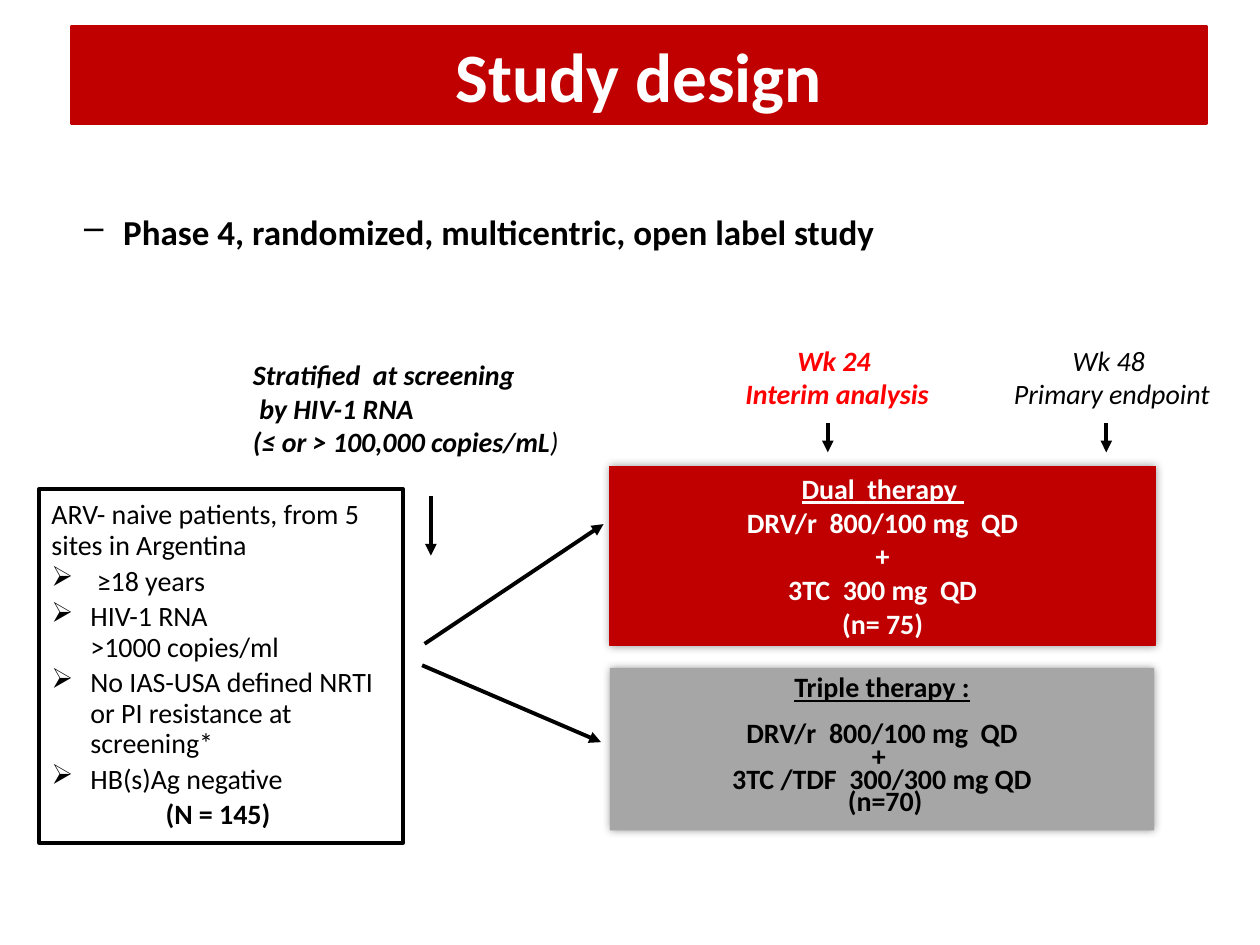
from dataclasses import dataclass
from typing import Optional

from lxml.etree import SubElement
from pptx import Presentation
from pptx.dml.color import RGBColor
from pptx.enum.shapes import MSO_CONNECTOR as Connector, MSO_SHAPE as Preset
from pptx.enum.text import MSO_ANCHOR as Anchor, PP_ALIGN as Align
from pptx.oxml.ns import qn
from pptx.util import Inches, Pt


@dataclass(frozen=True)
class Theme:
    font: str = "Calibri"
    red: str = "C00000"
    alert: str = "FF0000"
    gray: str = "A6A6A6"
    black: str = "000000"
    white: str = "FFFFFF"
    title_size: float = 39.6
    lead_size: float = 20
    text_size: float = 16
    arrow_width: float = 2.25


THEME = Theme()


@dataclass(frozen=True)
class Line:
    text: str
    color: str = THEME.black
    size: float = THEME.text_size
    bold: bool = False
    italic: bool = False
    underline: bool = False
    align: Align = Align.LEFT
    bullet: str = ""
    spacing: Optional[float] = None
    before: float = 0
    after: float = 0
    plain_end: str = ""


@dataclass(frozen=True)
class Box:
    left: float
    top: float
    width: float
    height: float
    lines: tuple[Line, ...]
    fill: Optional[str] = None
    outline: Optional[str] = None
    outline_width: float = 0.75
    glow: bool = False
    wrap: bool = True
    anchor: Anchor = Anchor.MIDDLE


@dataclass(frozen=True)
class Arrow:
    x1: float
    y1: float
    x2: float
    y2: float


def write_line(paragraph, line: Line) -> None:
    paragraph.text = line.text
    paragraph.alignment = line.align
    paragraph.space_before = Pt(line.before)
    paragraph.space_after = Pt(line.after)
    if line.spacing:
        paragraph.line_spacing = line.spacing if line.spacing < 3 else Pt(line.spacing)
    if line.bullet:
        properties = paragraph._p.get_or_add_pPr()
        properties.set("marL", str(Inches(0.31)))
        properties.set("indent", str(Inches(-0.31)))
        SubElement(properties, qn("a:buChar"), char=line.bullet)
    font = paragraph.font
    font.name = THEME.font
    font.size = Pt(line.size)
    font.bold = line.bold
    font.italic = line.italic
    font.underline = line.underline
    font.color.rgb = RGBColor.from_string(line.color)
    if line.plain_end:
        ending = paragraph.add_run()
        ending.text = line.plain_end
        ending.font.bold = False


def add_glow(shape) -> None:
    effects = shape._element.spPr.find(qn("a:effectLst"))
    shadow = SubElement(effects, qn("a:outerShdw"), blurRad=str(Pt(5)), dist="0", dir="0")
    color = SubElement(shadow, qn("a:srgbClr"), val=THEME.black)
    SubElement(color, qn("a:alpha"), val="40000")


def fill_box(shape, box: Box) -> None:
    shape.left, shape.top = Inches(box.left), Inches(box.top)
    shape.width, shape.height = Inches(box.width), Inches(box.height)
    if box.fill:
        shape.fill.solid()
        shape.fill.fore_color.rgb = RGBColor.from_string(box.fill)
    if box.outline:
        shape.line.color.rgb = RGBColor.from_string(box.outline)
        shape.line.width = Pt(box.outline_width)
    else:
        shape.line.fill.background()
    shape.shadow.inherit = False
    if box.glow:
        add_glow(shape)
    frame = shape.text_frame
    frame.word_wrap = box.wrap
    frame.vertical_anchor = box.anchor
    for index, line in enumerate(box.lines):
        write_line(frame.add_paragraph() if index else frame.paragraphs[0], line)


def add_box(slide, box: Box) -> None:
    frame = [Inches(value) for value in (box.left, box.top, box.width, box.height)]
    if box.fill:
        shape = slide.shapes.add_shape(Preset.RECTANGLE, *frame)
    else:
        shape = slide.shapes.add_textbox(*frame)
    fill_box(shape, box)


def add_arrow(slide, arrow: Arrow) -> None:
    ends = [Inches(value) for value in (arrow.x1, arrow.y1, arrow.x2, arrow.y2)]
    connector = slide.shapes.add_connector(Connector.STRAIGHT, *ends)
    connector.line.color.rgb = RGBColor.from_string(THEME.black)
    connector.line.width = Pt(THEME.arrow_width)
    properties = connector._element.spPr
    SubElement(properties.find(qn("a:ln")), qn("a:tailEnd"), type="triangle")
    SubElement(properties, qn("a:effectLst"))


def therapy_lines(heading: str, doses: tuple[str, ...], color: str,
                  spacing: float, gap: float = 0) -> tuple[Line, ...]:
    def dose_line(text: str, underline: bool = False, after: float = 0) -> Line:
        return Line(text, color, bold=True, underline=underline,
                    align=Align.CENTER, spacing=spacing, after=after)
    return (dose_line(heading, True, gap), *(dose_line(dose) for dose in doses))


def criterion(text: str, bullet: str = "➢", align: Align = Align.LEFT,
              bold: bool = False) -> Line:
    return Line(text, bullet=bullet, align=align, bold=bold, spacing=0.9, before=3.2)


def milestone(left: float, width: float, text: str, color: str, bold: bool) -> Box:
    return Box(left, 2.67, width, 0.64,
               (Line(text, color, bold=bold, italic=True, align=Align.CENTER),))


HEADING = Box(0.57, 0.21, 9, 0.77, (
    Line("Study design", THEME.white, THEME.title_size, bold=True, align=Align.CENTER),
), THEME.red, THEME.red, 2)

BOXES = (
    Box(0.57, 1.62, 9.43, 0.69, (
        Line("Phase 4, randomized, multicentric, open label study",
             size=THEME.lead_size, bold=True, bullet="–", before=4),
    ), anchor=Anchor.TOP),
    Box(4.84, 3.7, 4.33, 1.42, therapy_lines(
        "Dual  therapy ",
        ("DRV/r  800/100 mg  QD", " + ", "3TC  300 mg  QD", "(n= 75)"),
        THEME.white, 19.2), THEME.red, THEME.red, glow=True, wrap=False),
    Box(4.84, 5.3, 4.32, 1.29, therapy_lines(
        "Triple therapy :",
        ("DRV/r  800/100 mg  QD", "+ ", "3TC /TDF  300/300 mg QD", " (n=70)"),
        THEME.black, 13, gap=13), THEME.gray, glow=True, wrap=False),
    Box(0.31, 3.88, 2.89, 2.81, (
        criterion("ARV- naive patients, from 5 sites in Argentina", bullet=""),
        criterion(" ≥18 years"),
        criterion("HIV-1 RNA \n>1000 copies/ml"),
        criterion("No IAS-USA defined NRTI or PI resistance at screening*"),
        criterion("HB(s)Ag negative"),
        criterion("(N = 145) ", bullet="", align=Align.CENTER, bold=True),
    ), THEME.white, THEME.black, 2),
    Box(1.91, 2.79, 2.66, 0.91, (
        Line("Stratified  at screening \n by HIV-1 RNA", bold=True, italic=True),
        Line("(≤ or > 100,000 copies/mL", bold=True, italic=True,
             align=Align.CENTER, plain_end=")"),
    ), wrap=False, anchor=Anchor.TOP),
    milestone(7.83, 1.99, "Wk 48 \nPrimary endpoint", THEME.black, False),
    milestone(5.71, 1.87, "Wk 24 \nInterim analysis", THEME.alert, True),
)

ARROWS = (
    Arrow(3.37, 5.11, 4.79, 4.16),
    Arrow(3.35, 5.28, 4.77, 5.89),
    Arrow(3.42, 3.94, 3.42, 4.41),
    Arrow(8.78, 3.36, 8.78, 3.59),
    Arrow(6.57, 3.36, 6.57, 3.59),
)


def main() -> None:
    deck = Presentation()
    deck.slide_width, deck.slide_height = Inches(10), Inches(7.5)
    slide = deck.slides.add_slide(deck.slide_layouts[5])
    fill_box(slide.shapes.title, HEADING)
    for box in BOXES:
        add_box(slide, box)
    for arrow in ARROWS:
        add_arrow(slide, arrow)
    deck.save("out.pptx")


if __name__ == "__main__":
    main()
